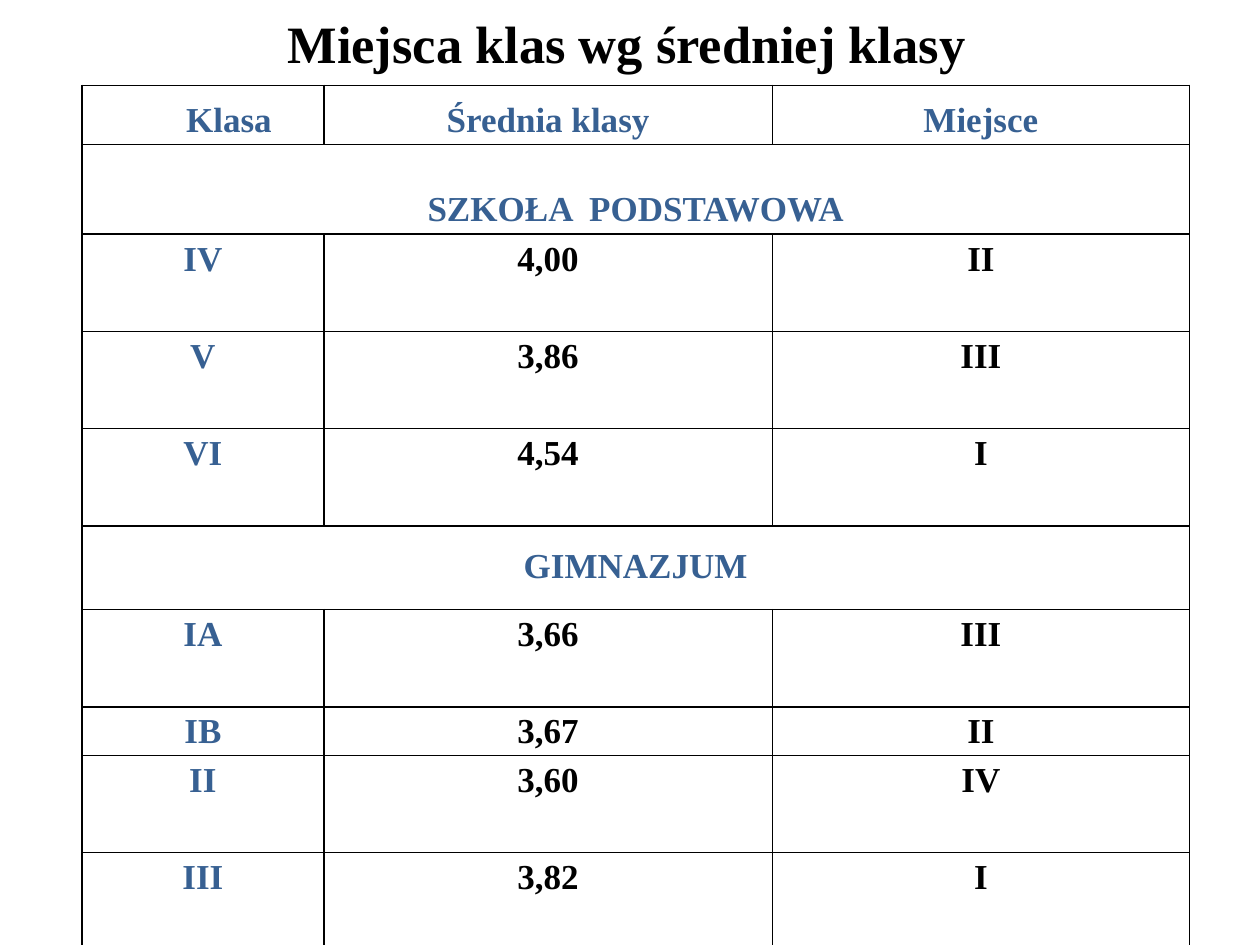
import pptx
import pptx.dml.color
import pptx.enum.text
import pptx.oxml
import pptx.oxml.ns
import pptx.util

Cm = pptx.util.Cm
Pt = pptx.util.Pt
BLUE = pptx.dml.color.RGBColor(0x37, 0x60, 0x92)
BLACK = pptx.dml.color.RGBColor(0, 0, 0)
FONT = "Times New Roman"


def write(frame, text, size=20, color=BLACK, space=1.15):
    para = frame.paragraphs[0]
    para.alignment = pptx.enum.text.PP_ALIGN.CENTER
    para.line_spacing = space
    run = para.add_run()
    run.text = text
    run.font.name = FONT
    run.font.size = Pt(size)
    run.font.bold = True
    run.font.color.rgb = color


def edge(cell):
    props = cell._tc.get_or_add_tcPr()
    for spot, side in enumerate(("lnL", "lnR", "lnT", "lnB")):
        line = pptx.oxml.parse_xml(
            f'<a:{side} {pptx.oxml.ns.nsdecls("a")} w="12700">'
            f'<a:solidFill><a:srgbClr val="{BLACK}"/></a:solidFill></a:{side}>'
        )
        props.insert(spot, line)


deck = pptx.Presentation()
deck.slide_width = Cm(25.4)
deck.slide_height = Cm(19.05)
slide = deck.slides.add_slide(deck.slide_layouts[6])

title = slide.shapes.add_textbox(Cm(5.34), Cm(0), Cm(14.6), Cm(2.18)).text_frame
title.word_wrap = False
title.margin_top = Cm(0.22)
title.margin_bottom = Cm(0)
write(title, "Miejsca klas wg średniej klasy", size=30, space=1.0)

TALL = 1.96
rows = [
    (1.19, 0.21, ("Klasa", "Średnia klasy", "Miejsce")),
    (1.81, 0.8, ("SZKOŁA  PODSTAWOWA",)),
    (TALL, 0, ("IV", "4,00", "II")),
    (TALL, 0, ("V", "3,86", "III")),
    (TALL, 0, ("VI", "4,54", "I")),
    (1.69, 0.31, ("GIMNAZJUM",)),
    (TALL, 0, ("IA", "3,66", "III")),
    (0.97, 0, ("IB", "3,67", "II")),
    (TALL, 0, ("II", "3,60", "IV")),
    (TALL, 0, ("III", "3,82", "I")),
]
wide = (4.88, 9.04, 8.41)
high = sum(row[0] for row in rows)
grid = slide.shapes.add_table(
    len(rows), len(wide), Cm(1.65), Cm(1.72), Cm(sum(wide)), Cm(high)
).table
grid.first_row = False
grid.horz_banding = False
for col, width in zip(grid.columns, wide):
    col.width = Cm(width)

for r, (height, top, words) in enumerate(rows):
    grid.rows[r].height = Cm(height)
    for c in range(len(wide)):
        cell = grid.cell(r, c)
        cell.margin_left = cell.margin_right = Cm(0.13)
        cell.margin_top = Cm(top)
        cell.margin_bottom = Cm(0)
        cell.fill.background()
        edge(cell)
    if len(words) == 1:
        grid.cell(r, 0).merge(grid.cell(r, len(wide) - 1))
    for c, word in enumerate(words):
        color = BLUE if r == 0 or c == 0 else BLACK
        write(grid.cell(r, c).text_frame, word, color=color)

grid.cell(0, 0).margin_left = Cm(1.18)

deck.save("out.pptx")
